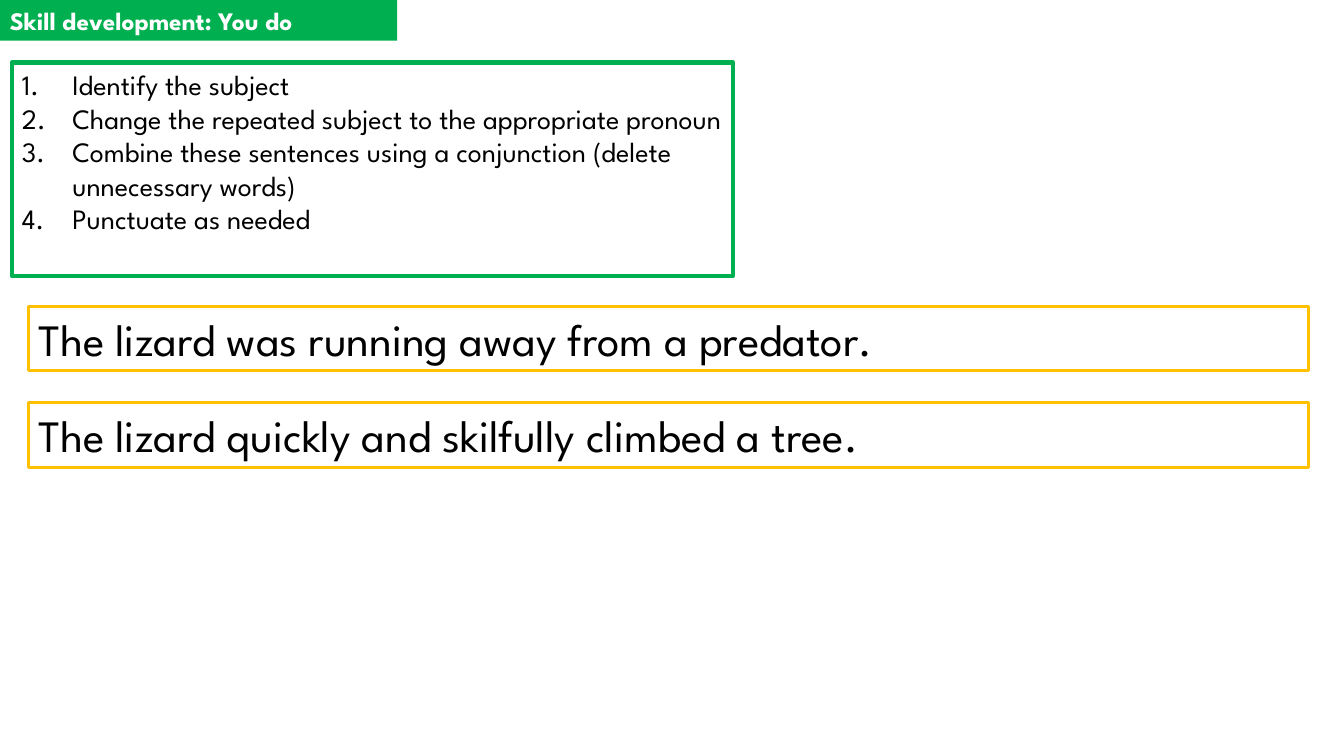
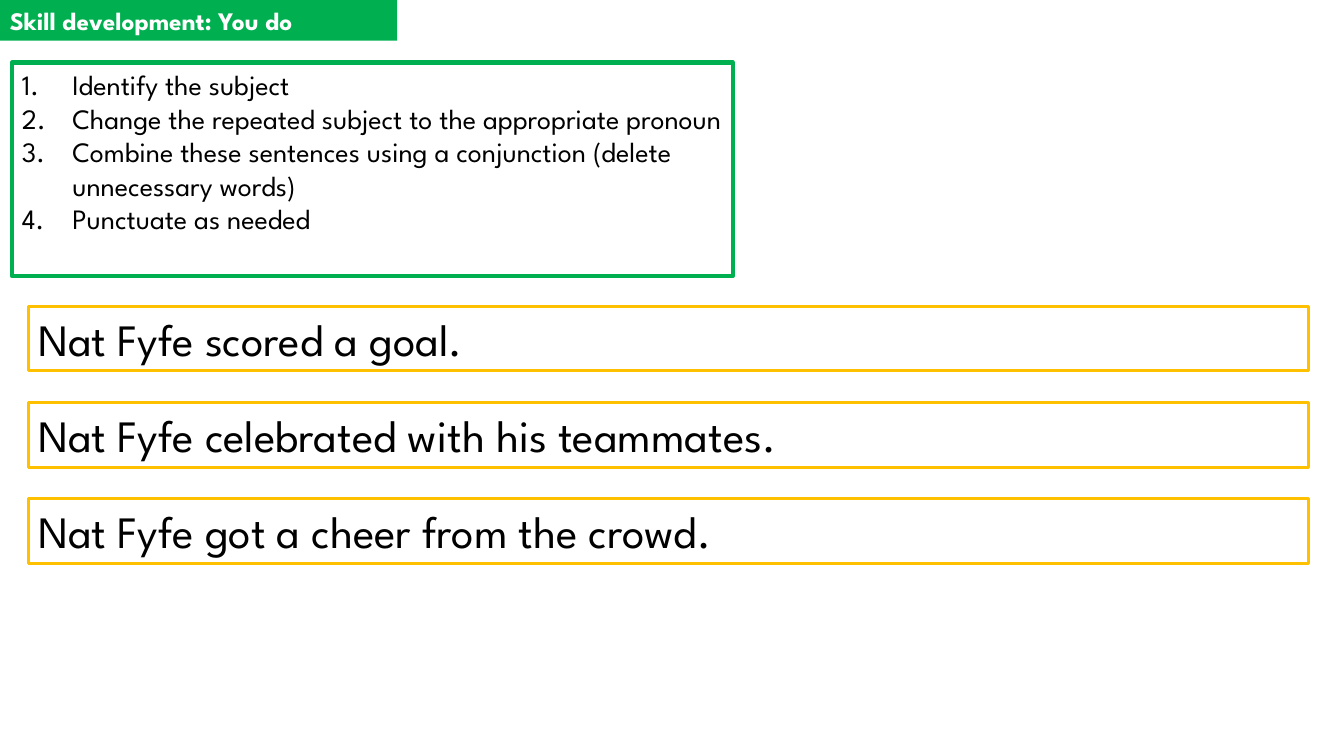
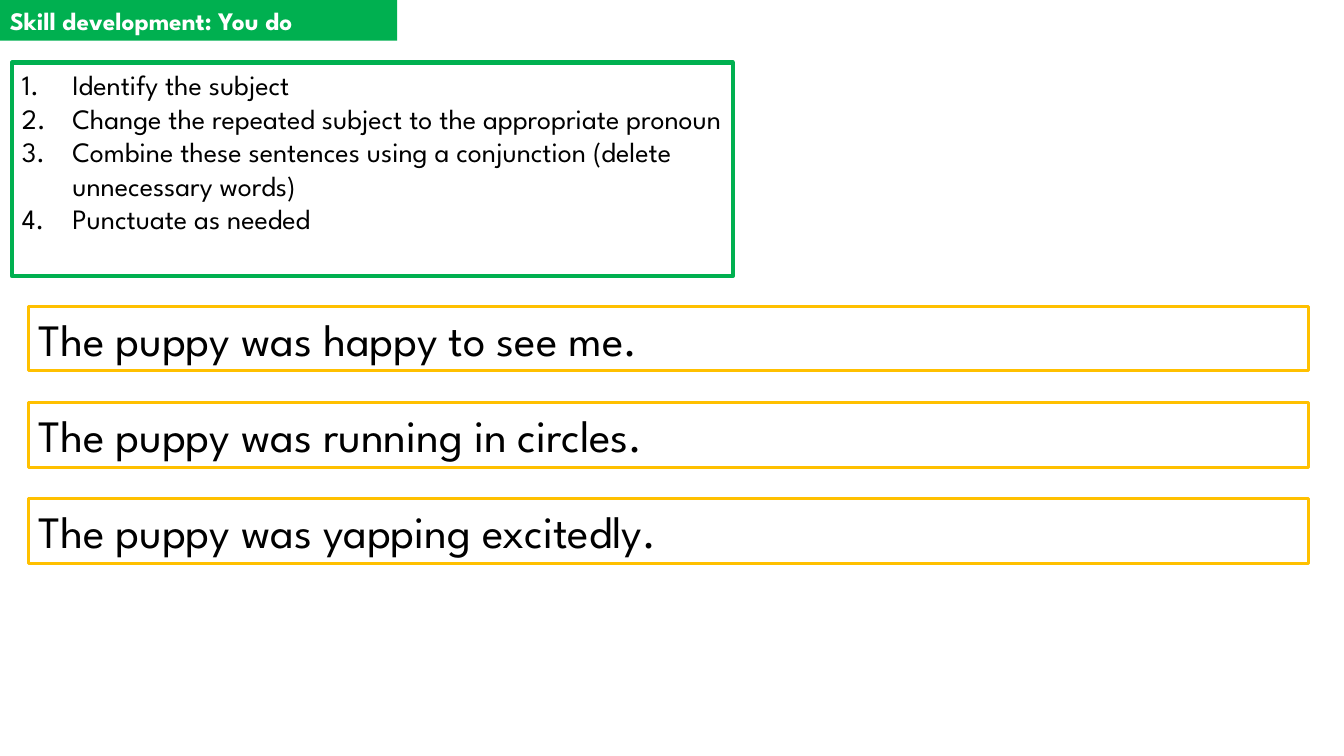
import pptx
import pptx.util
import pptx.dml.color
import pptx.enum.shapes
import pptx.enum.text
import pptx.oxml.ns
import lxml.etree

Pt = pptx.util.Pt
FONT = "League Spartan"
COLORS = {"green": "00B050", "amber": "FFC000", "white": "FFFFFF", "black": "000000"}
TITLE = "Skill development: You do"
STEPS = [
    "Identify the subject",
    "Change the repeated subject to the appropriate pronoun",
    "Combine these sentences using a conjunction (delete unnecessary words)",
    "Punctuate as needed",
]
EXERCISES = [
    ["The lizard was running away from a predator.",
     "The lizard quickly and skilfully climbed a tree."],
    ["Nat Fyfe scored a goal.",
     "Nat Fyfe celebrated with his teammates.",
     "Nat Fyfe got a cheer from the crowd."],
    ["The puppy was happy to see me.",
     "The puppy was running in circles.",
     "The puppy was yapping excitedly."],
]
TITLE_BOX = (0, 0, 283.6, 29)
STEPS_BOX = (8.6, 44.6, 514.8, 152.6)
SENTENCE_BOX = (20.2, 218.9, 914.4, 46.1)
SENTENCE_PITCH = 68.75
INDENT = 36


def rgb(name):
    return pptx.dml.color.RGBColor.from_string(COLORS[name])


def add_panel(s, box, lines, size, color="black", bold=False, fill=None, line=None, weight=0):
    sp = s.shapes.add_shape(pptx.enum.shapes.MSO_SHAPE.RECTANGLE, *map(Pt, box))
    sp.shadow.inherit = False
    if fill:
        sp.fill.solid()
        sp.fill.fore_color.rgb = rgb(fill)
    else:
        sp.fill.background()
    if line:
        sp.line.color.rgb = rgb(line)
        sp.line.width = Pt(weight)
    else:
        sp.line.fill.background()
    tf = sp.text_frame
    tf.word_wrap = True
    tf.vertical_anchor = pptx.enum.text.MSO_ANCHOR.TOP
    tf.text = "\n".join(lines)
    for p in tf.paragraphs:
        p.alignment = pptx.enum.text.PP_ALIGN.LEFT
        for r in p.runs:
            r.font.name = FONT
            r.font.size = Pt(size)
            r.font.bold = bold
            r.font.color.rgb = rgb(color)
    return sp


def number_paragraphs(tf):
    for p in tf.paragraphs:
        pPr = p._p.get_or_add_pPr()
        pPr.set("marL", str(Pt(INDENT)))
        pPr.set("indent", str(-Pt(INDENT)))
        bullet = lxml.etree.SubElement(pPr, pptx.oxml.ns.qn("a:buAutoNum"))
        bullet.set("type", "arabicPeriod")


def add_title(s, box):
    add_panel(s, box, [TITLE], 18, color="white", bold=True, fill="green")


def add_steps(s, box):
    sp = add_panel(s, box, STEPS, 20, fill="white", line="green", weight=3)
    number_paragraphs(sp.text_frame)


def add_sentences(s, box, sentences):
    left, top, width, height = box
    for i, sentence in enumerate(sentences):
        row = (left, top + i * SENTENCE_PITCH, width, height)
        add_panel(s, row, [sentence], 32, line="amber", weight=2.25)


def add_exercise_slide(prs, sentences):
    s = prs.slides.add_slide(prs.slide_layouts[6])
    add_sentences(s, SENTENCE_BOX, sentences)
    add_title(s, TITLE_BOX)
    add_steps(s, STEPS_BOX)


def main():
    prs = pptx.Presentation()
    prs.slide_width = Pt(960)
    prs.slide_height = Pt(540)
    for sentences in EXERCISES:
        add_exercise_slide(prs, sentences)
    prs.save("out.pptx")


if __name__ == "__main__":
    main()
